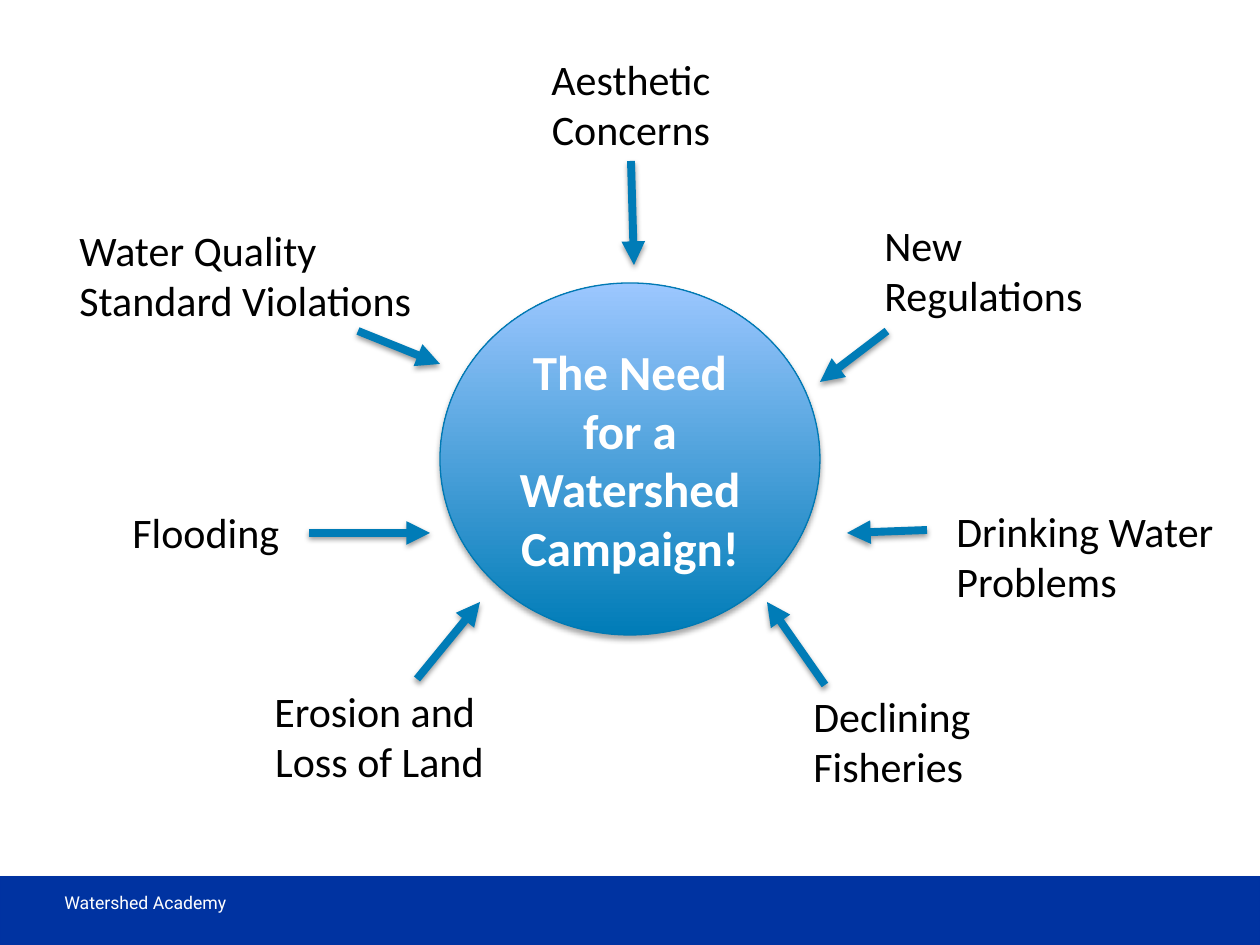
from lxml.etree import SubElement
from pptx import Presentation
from pptx.dml.color import RGBColor
from pptx.enum.shapes import MSO_CONNECTOR, MSO_SHAPE
from pptx.enum.text import MSO_ANCHOR, PP_ALIGN
from pptx.oxml.ns import qn
from pptx.util import Pt

COLORS = {
    "text": "000000",
    "white": "FFFFFF",
    "footer": "0033A1",
    "footer_edge": "0032A1",
    "arrow": "007CB7",
    "circle_edge": "0079B3",
    "circle_top": "9CC7FF",
    "shadow": "000000",
}
SLIDE = (1260, 945)
FOOTER_BAR = (0, 877, 1260, 67)
FOOTER = ("Watershed Academy", (52, 886, 423, 34))
CENTER = ("The Need for a Watershed Campaign!", (440, 283, 380, 352))
LEFT, MIDDLE = PP_ALIGN.LEFT, PP_ALIGN.CENTER

CONCERNS = [
    (["New Regulations"], (872, 213, 282, 115), LEFT, (887, 331), (820, 382)),
    (["Water Quality Standard Violations"], (67, 218, 393, 115), LEFT, (358, 331), (440, 364)),
    (["Aesthetic Concerns"], (500, 47, 262, 115), MIDDLE, (631, 161), (634, 265)),
    (["Flooding"], (120, 500, 311, 63), LEFT, (309, 533), (430, 533)),
    (["Erosion and ", "Loss of Land"], (215, 679, 329, 115), MIDDLE, (417, 679), (480, 602)),
    (["Drinking Water Problems"], (944, 499, 284, 115), LEFT, (927, 530), (847, 533)),
    (["Declining", "Fisheries"], (801, 684, 226, 115), LEFT, (825, 685), (767, 602)),
]


def px(*lengths):
    return [round(length * 914400 / 126) for length in lengths]


def rgb(name):
    return RGBColor.from_string(COLORS[name])


def add_shadow(part, opacity, distance):
    effects = SubElement(part._element.spPr, qn("a:effectLst"))
    shadow = SubElement(effects, qn("a:outerShdw"), blurRad=str(Pt(3.1)),
                        dist=str(Pt(distance)), dir="5400000", rotWithShape="0")
    color = SubElement(shadow, qn("a:srgbClr"), val=COLORS["shadow"])
    SubElement(color, qn("a:alpha"), val=str(opacity * 1000))


def write(frame, lines, size, color, font="Calibri", align=LEFT, bold=False):
    frame.word_wrap = True
    for index, line in enumerate(lines):
        paragraph = frame.add_paragraph() if index else frame.paragraphs[0]
        paragraph.alignment = align
        run = paragraph.add_run()
        run.text = line
        run.font.size = Pt(size)
        run.font.name = font
        run.font.bold = bold
        run.font.color.rgb = rgb(color)


def add_body(slide, kind, box, edge):
    body = slide.shapes.add_shape(kind, *px(*box))
    body.line.color.rgb = rgb(edge)
    body.line.width = Pt(0.75)
    return body


def add_arrow(slide, start, end):
    arrow = slide.shapes.add_connector(MSO_CONNECTOR.STRAIGHT, *px(*start, *end))
    arrow.line.color.rgb = rgb("arrow")
    arrow.line.width = Pt(4.5)
    SubElement(arrow.line._get_or_add_ln(), qn("a:tailEnd"), type="triangle")
    add_shadow(arrow, 38, 1.6)


def main():
    deck = Presentation()
    deck.slide_width, deck.slide_height = px(*SLIDE)
    slide = deck.slides.add_slide(deck.slide_layouts[6])

    bar = add_body(slide, MSO_SHAPE.RECTANGLE, FOOTER_BAR, "footer_edge")
    bar.fill.solid()
    bar.fill.fore_color.rgb = rgb("footer")
    add_shadow(bar, 35, 1.8)

    footer, footer_box = FOOTER
    footer_label = slide.shapes.add_textbox(*px(*footer_box))
    write(footer_label.text_frame, [footer], 10.1, "white", font="Roboto")

    need, circle_box = CENTER
    circle = add_body(slide, MSO_SHAPE.OVAL, circle_box, "circle_edge")
    circle.fill.gradient()
    circle.fill.gradient_angle = 90
    for stop, position, color in zip(circle.fill.gradient_stops, (0, 1), ("arrow", "circle_top")):
        stop.position = position
        stop.color.rgb = rgb(color)
    add_shadow(circle, 35, 1.8)
    circle.text_frame.vertical_anchor = MSO_ANCHOR.MIDDLE
    write(circle.text_frame, [need], 28, "white", align=MIDDLE, bold=True)

    for lines, box, align, start, end in CONCERNS:
        concern = slide.shapes.add_textbox(*px(*box))
        write(concern.text_frame, lines, 24, "text", align=align)
        add_arrow(slide, start, end)

    deck.save("out.pptx")


if __name__ == "__main__":
    main()
